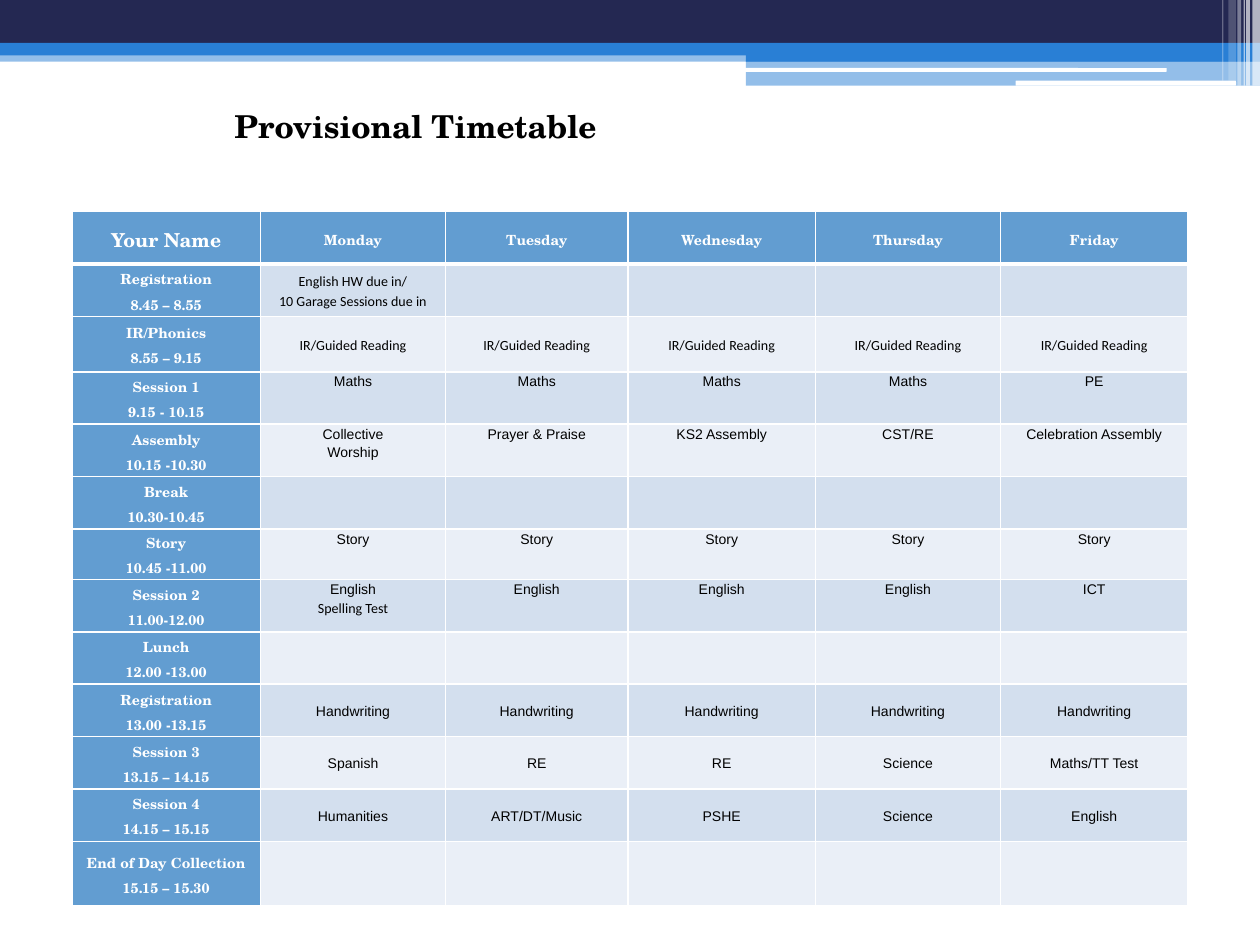
from dataclasses import dataclass

from lxml import etree
from pptx import Presentation
from pptx.dml.color import RGBColor
from pptx.enum.shapes import MSO_SHAPE
from pptx.enum.text import MSO_ANCHOR, PP_ALIGN
from pptx.oxml.ns import qn
from pptx.util import Inches, Pt

RECT, ROUND = MSO_SHAPE.RECTANGLE, MSO_SHAPE.ROUNDED_RECTANGLE
TOP, MIDDLE = MSO_ANCHOR.TOP, MSO_ANCHOR.MIDDLE
LEFT, CENTER = PP_ALIGN.LEFT, PP_ALIGN.CENTER


@dataclass(frozen=True)
class Theme:
    navy: str = "242852"
    blue: str = "297FD5"
    white: str = "FFFFFF"
    black: str = "000000"
    header: str = "629DD1"
    bands: tuple = ("D3DFEE", "EAEFF7")
    serif: str = "TeX Gyre Schola"
    sans: str = "Arial"
    note: str = "Calibri"
    title_size: int = 18
    name_size: int = 11
    cell_size: int = 8
    line_spacing: float = 1.15


THEME = Theme()

DAYS = ["Monday", "Tuesday", "Wednesday", "Thursday", "Friday"]
SESSIONS = [
    ("Registration", "8.45 – 8.55", MIDDLE,
     ["English HW due in/\n10 Garage Sessions due in"]),
    ("IR/Phonics", "8.55 – 9.15", MIDDLE, ["IR/Guided Reading"] * 5),
    ("Session 1", "9.15 - 10.15", TOP, ["Maths"] * 4 + ["PE"]),
    ("Assembly", "10.15 -10.30", TOP,
     ["Collective\nWorship", "Prayer & Praise", "KS2 Assembly", "CST/RE",
      "Celebration Assembly"]),
    ("Break", "10.30-10.45", TOP, []),
    ("Story", "10.45 -11.00", TOP, ["Story"] * 5),
    ("Session 2", "11.00-12.00", TOP,
     ["English\nSpelling Test"] + ["English"] * 3 + ["ICT"]),
    ("Lunch", "12.00 -13.00", TOP, []),
    ("Registration", "13.00 -13.15", MIDDLE, ["Handwriting"] * 5),
    ("Session 3", "13.15 – 14.15", MIDDLE,
     ["Spanish", "RE", "RE", "Science", "Maths/TT Test"]),
    ("Session 4", "14.15 – 15.15", MIDDLE,
     ["Humanities", "ART/DT/Music", "PSHE", "Science", "English"]),
    ("End of Day Collection", "15.15 – 15.30", TOP, []),
]
NOTE_LINES = {"English HW due in/", "10 Garage Sessions due in",
              "IR/Guided Reading", "Spelling Test"}
COLUMN_WIDTHS = [1.5, 1.47, 1.45, 1.49, 1.47, 1.49]
SPECIAL_ROWS = {2: 0.44, 6: 0.4, 12: 0.51}


def rgb(color):
    return RGBColor.from_string(color)


def add_run(p, text, font, size, color, bold):
    r = p.add_run()
    r.text = text
    r.font.name, r.font.size, r.font.bold = font, Pt(size), bold
    r.font.color.rgb = rgb(color)


def add_bar(slide, box, color, alpha=100, kind=RECT):
    s = slide.shapes.add_shape(kind, *map(Inches, box))
    s.shadow.inherit = False
    s.fill.solid()
    s.fill.fore_color.rgb = rgb(color)
    s.line.fill.background()
    if alpha < 100:
        clr = s.fill._xPr.find(qn("a:solidFill"))[0]
        etree.SubElement(clr, qn("a:alpha"), val=str(alpha * 1000))


def add_banner(slide, left, top, width):
    mid, half = left + 5.92, width - 5.92
    add_bar(slide, (left, top + 0.4, width, 0.09), THEME.blue, 50)
    add_bar(slide, (left, top, width, 0.34), THEME.navy)
    add_bar(slide, (left, top + 0.34, width, 0.1), THEME.blue)
    add_bar(slide, (mid, top + 0.39, half, 0.1), THEME.blue)
    add_bar(slide, (mid, top + 0.48, half, 0.2), THEME.blue, 50)
    add_bar(slide, (mid - 0.01, top + 0.54, 3.35, 0.03), THEME.white, kind=ROUND)
    add_bar(slide, (left + 8.06, top + 0.64, 1.75, 0.04), THEME.white, kind=ROUND)
    stripes = [(0.06, 0.06, 0.68, 65), (0.11, 0.03, 0.68, 65),
               (0.13, 0.01, 0.68, 60), (0.18, 0.03, 0.68, 40),
               (0.25, 0.06, 0.64, 20), (0.3, 0.01, 0.64, 30)]
    for offset, w, h, alpha in stripes:
        add_bar(slide, (left + width - offset, top, w, h), THEME.white, alpha)


def add_title(slide, box, text):
    title = slide.shapes.title
    title.left, title.top, title.width, title.height = map(Inches, box)
    tf = title.text_frame
    tf.word_wrap = True
    tf.vertical_anchor = MIDDLE
    p = tf.paragraphs[0]
    p.alignment = LEFT
    add_run(p, text, THEME.serif, THEME.title_size, THEME.black, True)


def set_borders(cell, top=1, bottom=1):
    tcPr = cell._tc.get_or_add_tcPr()
    for tag, width in (("lnL", 1), ("lnR", 1), ("lnT", top), ("lnB", bottom)):
        ln = etree.SubElement(tcPr, qn(f"a:{tag}"), w=str(Pt(width)))
        fill = etree.SubElement(ln, qn("a:solidFill"))
        etree.SubElement(fill, qn("a:srgbClr"), val=THEME.white)


def fill_cell(cell, text, fill, anchor, heading=False, size=THEME.cell_size):
    cell.fill.solid()
    cell.fill.fore_color.rgb = rgb(fill)
    cell.margin_left = cell.margin_right = Inches(0.06)
    cell.margin_top = cell.margin_bottom = 0
    cell.vertical_anchor = anchor
    if not text:
        return
    tf = cell.text_frame
    for i, line in enumerate(text.split("\n")):
        p = tf.add_paragraph() if i else tf.paragraphs[0]
        p.alignment = CENTER
        p.line_spacing = THEME.line_spacing
        body_font = THEME.note if line in NOTE_LINES else THEME.sans
        add_run(p, line, THEME.serif if heading else body_font, size,
                THEME.white if heading else THEME.black, heading)


def add_timetable(slide, left, top, width, height):
    rows, cols = len(SESSIONS) + 1, len(DAYS) + 1
    frame = slide.shapes.add_table(rows, cols, *map(Inches, (left, top, width, height)))
    table = frame.table
    table.horz_banding = False
    for column, w in zip(table.columns, COLUMN_WIDTHS):
        column.width = Inches(w * width / sum(COLUMN_WIDTHS))
    regular = (height - sum(SPECIAL_ROWS.values())) / (rows - len(SPECIAL_ROWS))
    for i, row in enumerate(table.rows):
        row.height = Inches(SPECIAL_ROWS.get(i, regular))
        for cell in row.cells:
            set_borders(cell, 3 if i == 1 else 1, 3 if i == 0 else 1)

    for c, text in enumerate(["Your Name"] + DAYS):
        size = THEME.cell_size if c else THEME.name_size
        fill_cell(table.cell(0, c), text, THEME.header, MIDDLE, True, size)
    for r, (name, time, anchor, entries) in enumerate(SESSIONS, 1):
        fill_cell(table.cell(r, 0), f"{name}\n{time}", THEME.header, MIDDLE, True)
        band = THEME.bands[(r - 1) % 2]
        for c in range(1, cols):
            text = entries[c - 1] if c <= len(entries) else ""
            fill_cell(table.cell(r, c), text, band, anchor)


def main():
    prs = Presentation()
    prs.slide_width, prs.slide_height = Inches(10), Inches(7.5)
    slide = prs.slides.add_slide(prs.slide_layouts[5])
    add_banner(slide, 0, 0, 10)
    add_timetable(slide, 0.57, 1.68, 8.86, 5.51)
    add_title(slide, (1.76, 0.8, 7, 0.4), "Provisional Timetable")
    prs.save("out.pptx")


if __name__ == "__main__":
    main()
